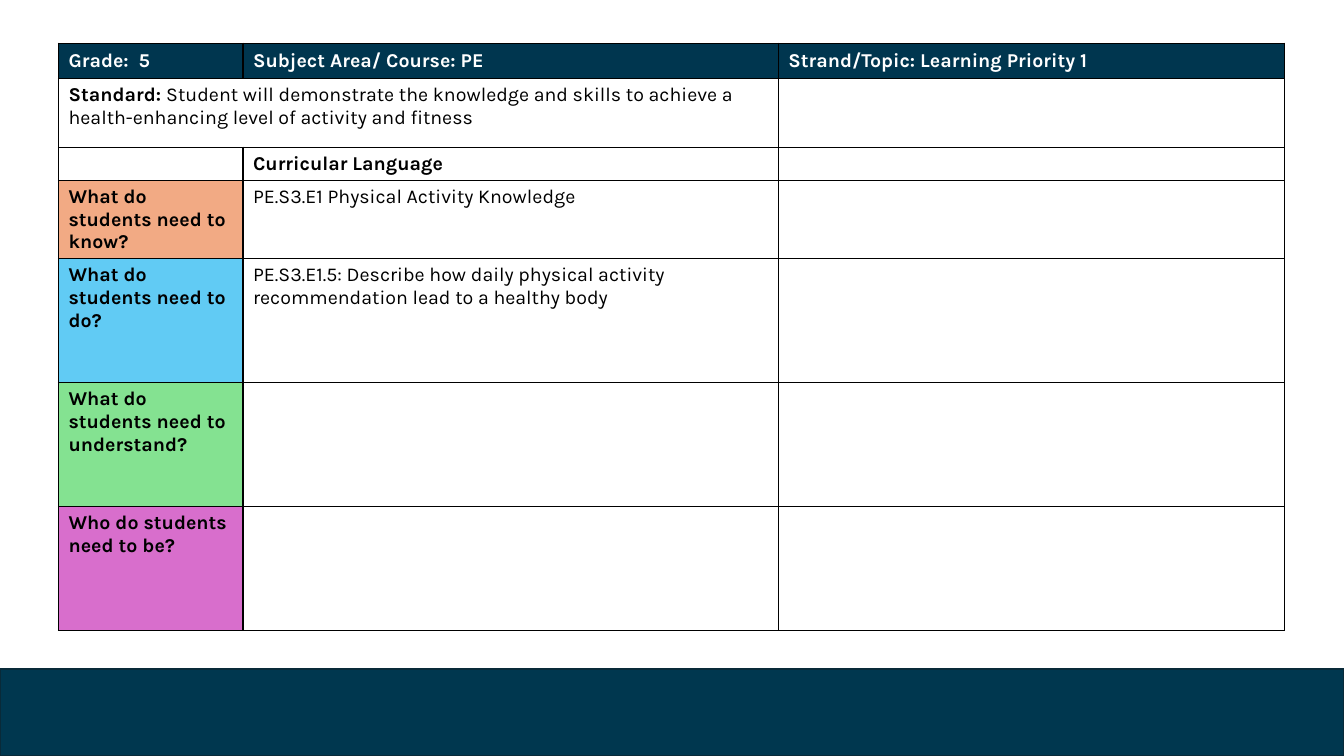
from dataclasses import dataclass

from lxml import etree
from pptx import Presentation
from pptx.dml.color import RGBColor
from pptx.enum.shapes import MSO_SHAPE
from pptx.enum.text import MSO_ANCHOR
from pptx.oxml.ns import qn
from pptx.slide import Slide
from pptx.table import _Cell
from pptx.util import Inches, Pt

RECTANGLE = MSO_SHAPE.RECTANGLE
TOP, MIDDLE = MSO_ANCHOR.TOP, MSO_ANCHOR.MIDDLE


@dataclass(frozen=True)
class Theme:
    font: str = "Karla"
    text_size: float = 14
    border_width: float = 1
    footer_line_width: float = 1.5
    black: str = "000000"
    white: str = "FFFFFF"
    footer: str = "00374F"
    footer_line: str = "092A39"
    header: str = "00364F"
    know: str = "F2AA84"
    do: str = "61CBF4"
    understand: str = "84E291"
    be: str = "D86ECC"


THEME = Theme()


@dataclass(frozen=True)
class Entry:
    """One table cell: a bold part followed by a regular part."""
    bold: str = ""
    regular: str = ""
    fill: str = THEME.white
    color: str = THEME.black
    anchor: MSO_ANCHOR = TOP
    columns: int = 1


def header(text: str) -> Entry:
    return Entry(text, fill=THEME.header, color=THEME.white, anchor=MIDDLE)


def question(text: str, fill: str, answer: str = "") -> list[Entry]:
    return [Entry(text, fill=fill), Entry(regular=answer), Entry()]


COLUMN_WIDTHS = [1.83, 5.31, 5.02]
ROW_HEIGHTS = [0.35, 0.68, 0.31, 0.76, 1.23, 1.23, 1.23]
PLAN = [
    [header("Grade:  5"), header("Subject Area/ Course: PE"),
     header("Strand/Topic: Learning Priority 1")],
    [Entry("Standard: ", "Student will demonstrate the knowledge and skills to achieve a "
           "health-enhancing level of activity and fitness", columns=2), Entry(), Entry()],
    [Entry(), Entry("Curricular Language"), Entry()],
    question("What do students need to know?", THEME.know, "PE.S3.E1 Physical Activity Knowledge"),
    question("What do students need to do?", THEME.do,
             "PE.S3.E1.5: Describe how daily physical activity recommendation "
             "lead to a healthy body"),
    question("What do students need to understand?", THEME.understand),
    question("Who do students need to be?", THEME.be),
]


def add_borders(cell: _Cell) -> None:
    properties = cell._tc.get_or_add_tcPr()
    for position, side in enumerate(("a:lnL", "a:lnR", "a:lnT", "a:lnB")):
        border = etree.Element(qn(side), w=str(Pt(THEME.border_width)))
        solid = etree.SubElement(border, qn("a:solidFill"))
        etree.SubElement(solid, qn("a:srgbClr"), val=THEME.black)
        properties.insert(position, border)


def fill_cell(cell: _Cell, entry: Entry) -> None:
    cell.fill.solid()
    cell.fill.fore_color.rgb = RGBColor.from_string(entry.fill)
    cell.vertical_anchor = entry.anchor
    add_borders(cell)
    paragraph = cell.text_frame.paragraphs[0]
    for text, is_bold in ((entry.bold, True), (entry.regular, False)):
        if text:
            run = paragraph.add_run()
            run.text = text
            run.font.name = THEME.font
            run.font.size = Pt(THEME.text_size)
            run.font.bold = is_bold
            run.font.color.rgb = RGBColor.from_string(entry.color)
    # Empty cells keep the text size, so short rows stay short
    if not paragraph.runs:
        end = etree.SubElement(paragraph._p, qn("a:endParaRPr"), sz=str(int(THEME.text_size * 100)))
        etree.SubElement(end, qn("a:latin"), typeface=THEME.font)


def add_footer(slide: Slide) -> None:
    footer = slide.shapes.add_shape(RECTANGLE, Inches(0), Inches(6.64), Inches(13.33), Inches(0.86))
    footer.shadow.inherit = False
    footer.fill.solid()
    footer.fill.fore_color.rgb = RGBColor.from_string(THEME.footer)
    footer.line.color.rgb = RGBColor.from_string(THEME.footer_line)
    footer.line.width = Pt(THEME.footer_line_width)


def add_plan(slide: Slide) -> None:
    plan = slide.shapes.add_table(
        len(PLAN), len(COLUMN_WIDTHS), Inches(0.58), Inches(0.43),
        Inches(sum(COLUMN_WIDTHS)), Inches(sum(ROW_HEIGHTS))).table
    plan.first_row = plan.horz_banding = False
    for column, width in zip(plan.columns, COLUMN_WIDTHS):
        column.width = Inches(width)
    for row, height in zip(plan.rows, ROW_HEIGHTS):
        row.height = Inches(height)
    for r, entries in enumerate(PLAN):
        for c, entry in enumerate(entries):
            cell = plan.cell(r, c)
            fill_cell(cell, entry)
            if entry.columns > 1:
                cell.merge(plan.cell(r, c + entry.columns - 1))


def main() -> None:
    deck = Presentation()
    deck.slide_width, deck.slide_height = Inches(13.33), Inches(7.5)
    slide = deck.slides.add_slide(deck.slide_layouts[6])
    # Footer band
    add_footer(slide)
    # Lesson planning table
    add_plan(slide)
    deck.save("out.pptx")


if __name__ == "__main__":
    main()
